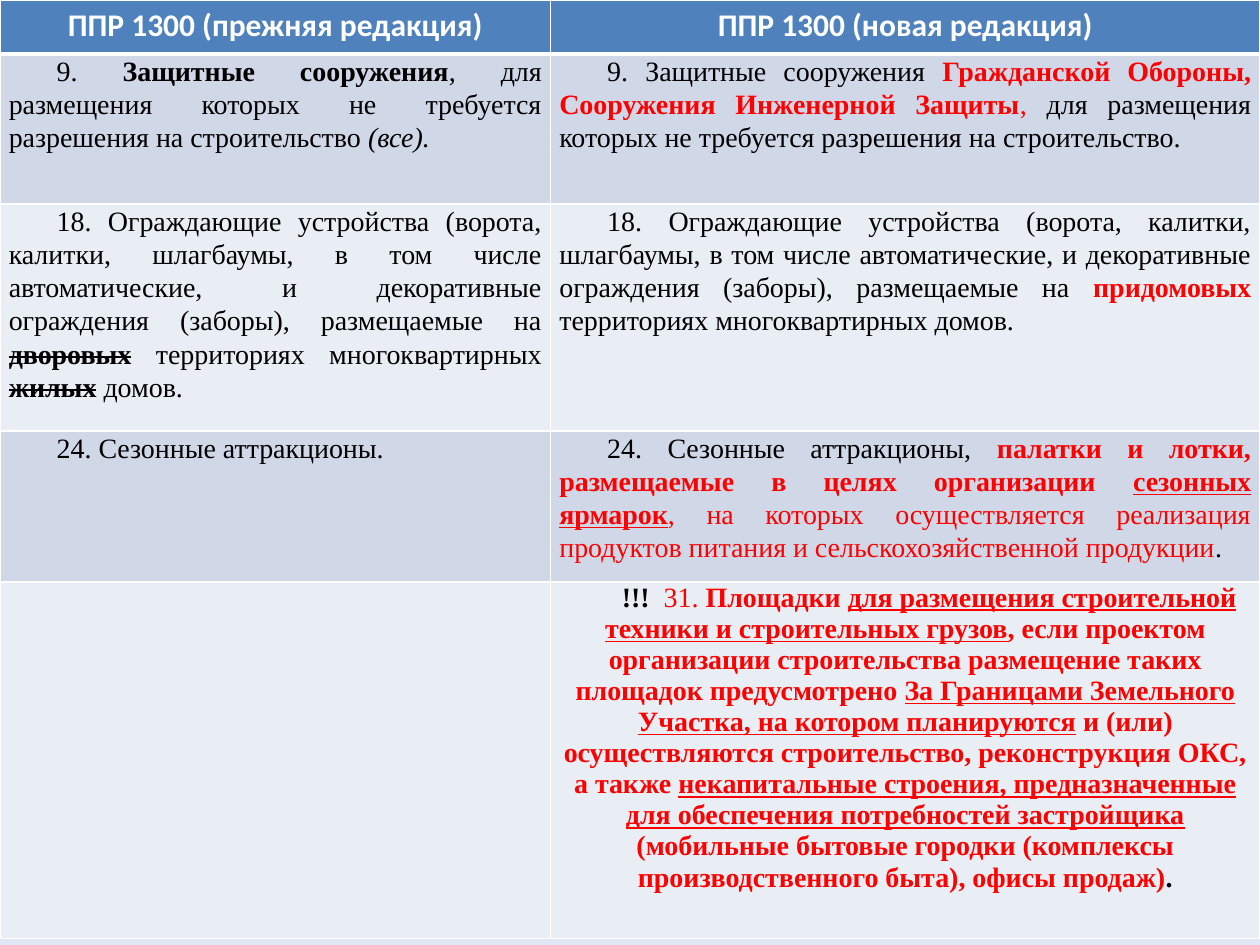
from typing import NamedTuple

from pptx import Presentation
from pptx import util as u
from pptx.dml.color import RGBColor
from pptx.enum import text
from pptx.oxml import parse_xml
from pptx.oxml.ns import nsdecls

HUES = {"head": "4F81BD", "odd": "D0D8E8", "even": "E9EDF4",
        "white": "FFFFFF", "black": "000000", "red": "FF0000"}
SKY = {0: "9AB5E4", 50: "C2D1ED", 100: "E1E8F5"}
COLS = [4.37, 5.63]
ROWS = [0.43, 1.19, 1.8, 1.2, 2.83]
ALIGN = text.PP_ALIGN


class Run(NamedTuple):
    words: str
    marks: str = ""  # b bold, i italic, u underline, s strike, r red


class Style(NamedTuple):
    font: str
    size: int
    hue: str
    align: ALIGN
    lead: float = 1.0
    dent: float = 0


HEAD = Style("Calibri", 18, "white", ALIGN.CENTER)
BODY = Style("Times New Roman", 16, "black", ALIGN.JUSTIFY, 1.07, 0.38)
NEW = BODY._replace(align=ALIGN.CENTER, lead=1.0)

FENCE = ("18. Ограждающие устройства (ворота, калитки, шлагбаумы, в том числе "
         "автоматические, и декоративные ограждения (заборы), размещаемые на ")

# Each row: old wording, new wording
TEXTS = [
    ([Run("ППР 1300 (прежняя редакция)", "b")],
     [Run("ППР 1300 (новая редакция)", "b")]),
    ([Run("9. "), Run("Защитные сооружения", "b"),
      Run(", для размещения которых не требуется разрешения на строительство "),
      Run("(все).", "i")],
     [Run("9. Защитные сооружения "),
      Run("Гражданской Обороны, Сооружения Инженерной Защиты", "br"),
      Run(", ", "r"),
      Run("для размещения которых не требуется разрешения на строительство.")]),
    ([Run(FENCE), Run("дворовых", "bs"), Run(" территориях многоквартирных "),
      Run("жилых", "bs"), Run(" домов.")],
     [Run(FENCE), Run("придомовых", "br"),
      Run(" территориях многоквартирных домов.")]),
    ([Run("24. Сезонные аттракционы.")],
     [Run("24. Сезонные аттракционы, "),
      Run("палатки и лотки, размещаемые в целях организации ", "br"),
      Run("сезонных ярмарок", "bur"),
      Run(", на которых осуществляется реализация продуктов питания и "
          "сельскохозяйственной продукции", "r"),
      Run(".")]),
    ([],
     [Run("!!! ", "b"), Run(" 31. ", "r"), Run("Площадки ", "br"),
      Run("для размещения строительной техники и строительных грузов", "bur"),
      Run(", если проектом организации строительства размещение таких "
          "площадок предусмотрено ", "br"),
      Run("За Границами Земельного Участка, на котором планируются", "bur"),
      Run(" и (или) осуществляются строительство, реконструкция ОКС, "
          "а также ", "br"),
      Run("некапитальные строения, предназначенные для обеспечения "
          "потребностей застройщика ", "bur"),
      Run("(мобильные бытовые городки (комплексы производственного быта), "
          "офисы продаж)", "br"),
      Run(".", "b")]),
]


def tint(name: str) -> RGBColor:
    return RGBColor.from_string(HUES[name])


def paint(slide) -> None:
    """Give the slide its three-stop vertical gradient."""
    stops = "".join(f'<a:gs pos="{pos * 1000}"><a:srgbClr val="{hue}"/></a:gs>'
                    for pos, hue in SKY.items())
    slide.element.cSld.insert(0, parse_xml(
        f'<p:bg {nsdecls("p", "a")}><p:bgPr><a:gradFill><a:gsLst>{stops}'
        '</a:gsLst><a:lin ang="5400000" scaled="0"/></a:gradFill>'
        '<a:effectLst/></p:bgPr></p:bg>'))


def edge(cell, row: int) -> None:
    """Draw white borders, thicker under the header row."""
    widths = {"L": 1, "R": 1, "T": 3 if row == 1 else 1,
              "B": 3 if row == 0 else 1}
    props = cell._tc.get_or_add_tcPr()
    for spot, (side, width) in enumerate(widths.items()):
        props.insert(spot, parse_xml(
            f'<a:ln{side} {nsdecls("a")} w="{u.Pt(width)}"><a:solidFill>'
            f'<a:srgbClr val="{HUES["white"]}"/></a:solidFill></a:ln{side}>'))


def write(cell, runs: list[Run], style: Style) -> None:
    para = cell.text_frame.paragraphs[0]
    para.alignment = style.align
    para.line_spacing = style.lead
    para._p.get_or_add_pPr().set("indent", str(u.Inches(style.dent)))
    for words, marks in runs:
        run = para.add_run()
        run.text = words
        font = run.font
        font.name, font.size = style.font, u.Pt(style.size)
        font.bold, font.italic = "b" in marks, "i" in marks
        font.underline = "u" in marks
        font.color.rgb = tint("red" if "r" in marks else style.hue)
        if "s" in marks:
            run._r.get_or_add_rPr().set("strike", "sngStrike")


def build(slide) -> None:
    grid = slide.shapes.add_table(
        len(ROWS), len(COLS), 0, 0,
        u.Inches(sum(COLS)), u.Inches(sum(ROWS))).table
    for col, width in zip(grid.columns, COLS):
        col.width = u.Inches(width)
    for row, (high, pair) in enumerate(zip(ROWS, TEXTS)):
        grid.rows[row].height = u.Inches(high)
        style = HEAD if row == 0 else NEW if row == len(ROWS) - 1 else BODY
        fill = "head" if row == 0 else "odd" if row % 2 else "even"
        for col, runs in enumerate(pair):
            cell = grid.cell(row, col)
            cell.fill.solid()
            cell.fill.fore_color.rgb = tint(fill)
            edge(cell, row)
            if row:
                cell.margin_left = cell.margin_right = u.Inches(0.07)
                cell.margin_top = cell.margin_bottom = 0
            if runs:
                write(cell, runs, style)


def main() -> None:
    deck = Presentation()
    deck.slide_width, deck.slide_height = u.Inches(10), u.Inches(7.5)
    slide = deck.slides.add_slide(deck.slide_layouts[6])
    paint(slide)
    build(slide)
    deck.save("out.pptx")


if __name__ == "__main__":
    main()
